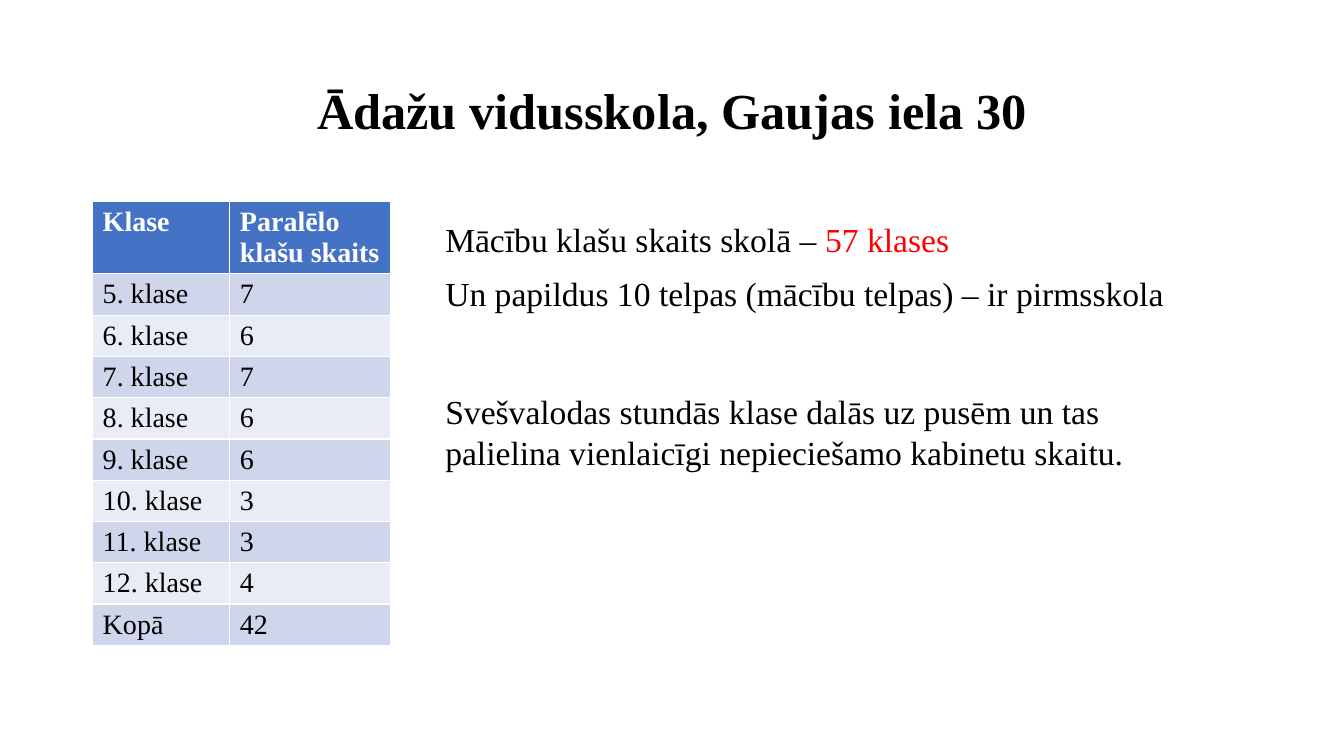
import pptx
import pptx.util
import pptx.dml.color
import pptx.enum.text

Pt = pptx.util.Pt
RGB = pptx.dml.color.RGBColor
BLACK = RGB(0x00, 0x00, 0x00)
WHITE = RGB(0xFF, 0xFF, 0xFF)
RED = RGB(0xFF, 0x00, 0x00)
BLUE = RGB(0x44, 0x72, 0xC4)
BANDS = [RGB(0xE9, 0xEB, 0xF5), RGB(0xCF, 0xD5, 0xEA)]
FONT = "Times New Roman"

CLASSES = [
    ("Klase", "Paralēlo klašu skaits"),
    ("5. klase", "7"),
    ("6. klase", "6"),
    ("7. klase", "7"),
    ("8. klase", "6"),
    ("9. klase", "6"),
    ("10. klase", "3"),
    ("11. klase", "3"),
    ("12. klase", "4"),
    ("Kopā", "42"),
]
ROOMS = [
    [("Mācību klašu skaits skolā – ", BLACK), ("57 klases", RED)],
    [("Un papildus 10 telpas (mācību telpas) – ir pirmsskola", BLACK)],
]
GROUPS = [
    [("Svešvalodas stundās klase dalās uz pusēm un tas palielina "
      "vienlaicīgi nepieciešamo kabinetu skaitu.", BLACK)],
]


def assign(item, values):
    for name, value in values.items():
        setattr(item, name, value)


def add_run(para, text, size, color, bold=False):
    run = para.add_run()
    run.text = text
    assign(run.font, {"name": FONT, "size": Pt(size), "bold": bold})
    run.font.color.rgb = color


def set_title(slide, text):
    title = slide.shapes.title
    assign(title, {"left": Pt(66), "top": Pt(28.8),
                   "width": Pt(828), "height": Pt(104.4)})
    title.text_frame.vertical_anchor = pptx.enum.text.MSO_ANCHOR.MIDDLE
    para = title.text_frame.paragraphs[0]
    assign(para, {"alignment": pptx.enum.text.PP_ALIGN.CENTER,
                  "line_spacing": 0.9})
    add_run(para, text, 36, BLACK, True)


def add_grid(slide, rows, left, top, widths, head, step):
    height = head + step * (len(rows) - 1)
    table = slide.shapes.add_table(
        len(rows), len(widths), Pt(left), Pt(top),
        Pt(sum(widths)), Pt(height)).table
    for column, width in zip(table.columns, widths):
        column.width = Pt(width)
    for i, row in enumerate(rows):
        table.rows[i].height = Pt(step if i else head)
        for j, text in enumerate(row):
            cell = table.cell(i, j)
            cell.fill.solid()
            cell.fill.fore_color.rgb = BANDS[i % 2] if i else BLUE
            add_run(cell.text_frame.paragraphs[0], text, 20,
                    BLACK if i else WHITE, i == 0)


def add_note(slide, paras, box, format):
    frame = slide.shapes.add_textbox(*map(Pt, box)).text_frame
    assign(frame, {"word_wrap": True,
                   "auto_size": pptx.enum.text.MSO_AUTO_SIZE.SHAPE_TO_FIT_TEXT})
    for i, runs in enumerate(paras):
        para = frame.add_paragraph() if i else frame.paragraphs[0]
        assign(para, format)
        for text, color in runs:
            add_run(para, text, 24, color)


def main():
    deck = pptx.Presentation()
    assign(deck, {"slide_width": Pt(960), "slide_height": Pt(540)})
    slide = deck.slides.add_slide(deck.slide_layouts[5])
    set_title(slide, "Ādažu vidusskola, Gaujas iela 30")
    add_grid(slide, CLASSES, 66.2, 144, [98, 114.5], 50.4, 29.5)
    add_note(slide, ROOMS, (311, 150.5, 545, 75.6),
             {"line_spacing": 1.07, "space_after": Pt(8)})
    add_note(slide, GROUPS, (311, 275.8, 536.4, 87.1), {})
    deck.save("out.pptx")


if __name__ == "__main__":
    main()
